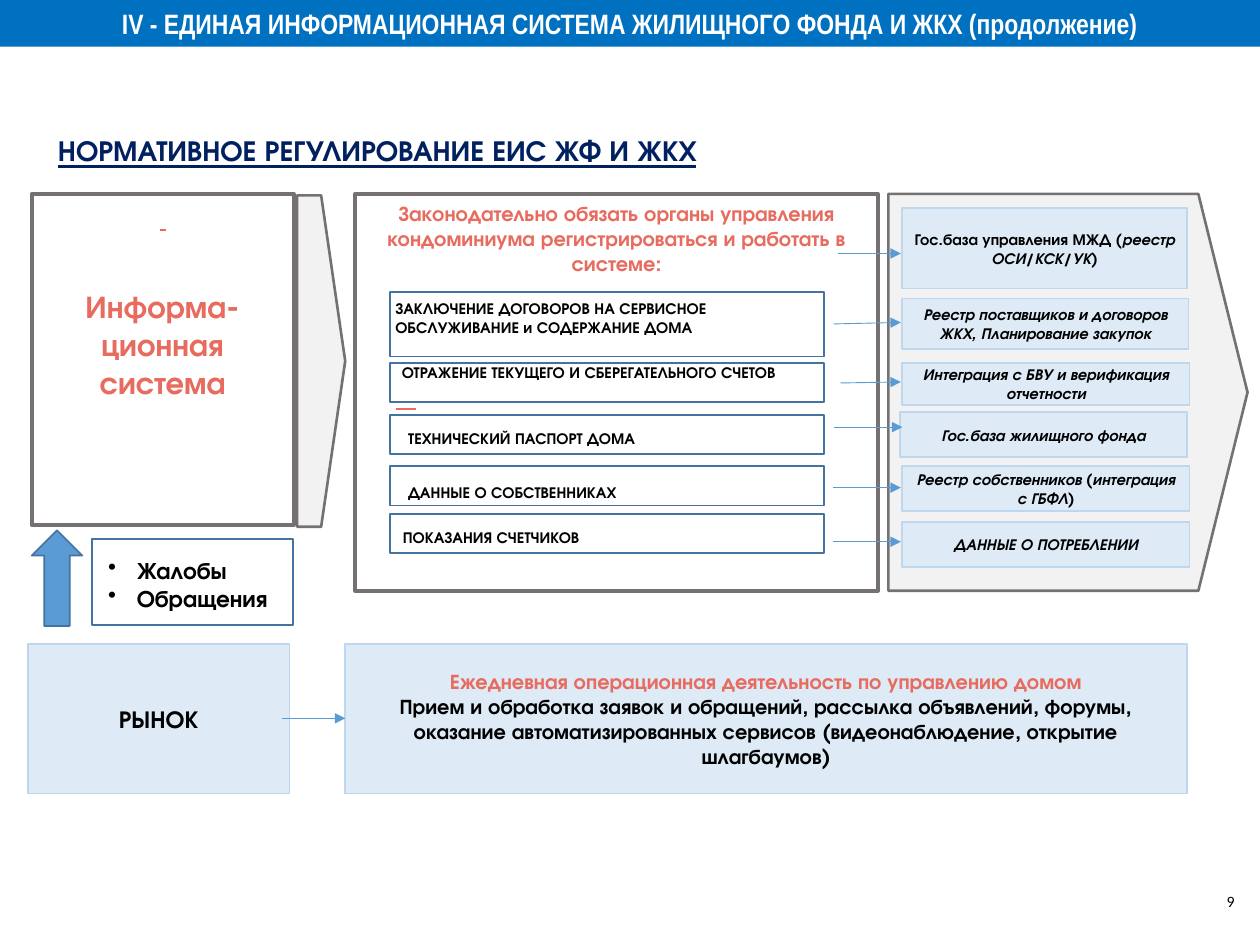
from pptx import Presentation
from pptx.dml.color import RGBColor
from pptx.enum.shapes import MSO_CONNECTOR as Link, MSO_SHAPE as Form
from pptx.enum.text import MSO_ANCHOR as Anchor, PP_ALIGN as Align
from pptx.oxml.ns import qn
from pptx.util import Cm, Pt
from lxml import etree

WHITE = RGBColor(0xFF, 0xFF, 0xFF)
BLACK = RGBColor(0, 0, 0)
NAVY = RGBColor(0x00, 0x20, 0x60)
CORAL = RGBColor(0xE7, 0x6B, 0x5E)
GRAY = RGBColor(0x76, 0x71, 0x71)
PALE = RGBColor(0xF2, 0xF2, 0xF2)
SKY = RGBColor(0xDE, 0xEB, 0xF7)
RIM = RGBColor(0xBD, 0xD7, 0xEE)
BLUE = RGBColor(0x5B, 0x9B, 0xD5)
EDGE = RGBColor(0x43, 0x73, 0x9E)
BAR = RGBColor(0x00, 0x70, 0xC0)
FACE = "TeX Gyre Adventor"

TASKS = [
    (5.89, 1.3, 0.1, 0.14, ["ЗАКЛЮЧЕНИЕ ДОГОВОРОВ НА СЕРВИСНОЕ",
                            "ОБСЛУЖИВАНИЕ и СОДЕРЖАНИЕ ДОМА"]),
    (7.32, 0.79, 0.23, 0, ["ОТРАЖЕНИЕ ТЕКУЩЕГО И СБЕРЕГАТЕЛЬНОГО СЧЕТОВ"]),
    (8.36, 0.79, 0.36, 0.28, ["ТЕХНИЧЕСКИЙ ПАСПОРТ ДОМА"]),
    (9.4, 0.79, 0.36, 0.34, ["ДАННЫЕ О СОБСТВЕННИКАХ"]),
    (10.36, 0.79, 0.25, 0.28, ["ПОКАЗАНИЯ СЧЕТЧИКОВ"]),
]
BASES = [
    (18.19, 4.19, 5.74, 1.63, "Гос.база управления МЖД ", "(реестр ОСИ/КСК/УК)"),
    (18.19, 6.02, 5.77, 1.02, "", "Реестр поставщиков и договоров ЖКХ, Планирование закупок"),
    (18.19, 7.32, 5.79, 0.84, "", "Интеграция с БВУ и верификация отчетности"),
    (18.14, 8.31, 5.79, 0.91, "", "Гос.база жилищного фонда"),
    (18.19, 9.4, 5.79, 0.91, "", "Реестр собственников (интеграция с ГБФЛ)"),
    (18.19, 10.52, 5.79, 0.91, "", "ДАННЫЕ О ПОТРЕБЛЕНИИ"),
]
ARROWS = [
    (16.89, 5.11, 18.16, 5.11), (16.81, 6.53, 18.16, 6.5),
    (16.94, 7.72, 18.16, 7.7), (16.81, 8.61, 18.19, 8.61),
    (16.79, 9.83, 18.16, 9.83), (16.79, 10.92, 18.16, 10.92),
    (5.69, 14.48, 6.96, 14.48),
]


def shape(slide, area, fill=None, line=None, width=1, form=Form.RECTANGLE):
    item = slide.shapes.add_shape(form, *map(Cm, area))
    item.shadow.inherit = False
    if fill is None:
        item.fill.background()
    else:
        item.fill.solid()
        item.fill.fore_color.rgb = fill
    item.line.color.rgb = line
    item.line.width = Pt(width)
    return item


def label(slide, area):
    return slide.shapes.add_textbox(*map(Cm, area))


def write(item, lines, size, color=BLACK, align=Align.CENTER,
          anchor=Anchor.MIDDLE, bold=True, face=FACE, pad=(0.25, 0.13, 0.25, 0.13)):
    frame = item.text_frame
    frame.word_wrap = True
    frame.vertical_anchor = anchor
    (frame.margin_left, frame.margin_top,
     frame.margin_right, frame.margin_bottom) = map(Cm, pad)
    frame.text = "\n".join(lines)
    for para in frame.paragraphs:
        para.alignment = align
        font = para.font
        font.name, font.size, font.bold = face, Pt(size), bold
        font.color.rgb = color
    return frame


def line(slide, ends, color=BLUE, width=0.5, arrow=True):
    link = slide.shapes.add_connector(Link.STRAIGHT, *map(Cm, ends))
    link.line.color.rgb = color
    link.line.width = Pt(width)
    if arrow:
        etree.SubElement(link.line._get_or_add_ln(), qn("a:tailEnd"), type="triangle")
    etree.SubElement(link._element.spPr, qn("a:effectLst"))


def bullet(para):
    props = para._p.get_or_add_pPr()
    props.set("marL", str(Cm(0.58)))
    props.set("indent", str(Cm(-0.58)))
    mark = etree.Element(qn("a:buChar"), char="•")
    props.insert_element_before(mark, "a:tabLst", "a:defRPr", "a:extLst")


def head(slide):
    title = slide.shapes.title
    title.left, title.top, title.width, title.height = map(Cm, (0, 0, 25.4, 0.94))
    title.fill.solid()
    title.fill.fore_color.rgb = BAR
    write(title, ["IV - ЕДИНАЯ ИНФОРМАЦИОННАЯ СИСТЕМА ЖИЛИЩНОГО ФОНДА И ЖКХ (продолжение)"],
          16, WHITE, face="Arial Narrow")
    sub = write(label(slide, (1.04, 2.57, 19.3, 0.89)),
                ["НОРМАТИВНОЕ РЕГУЛИРОВАНИЕ ЕИС ЖФ И ЖКХ"], 16.6, NAVY,
                Align.LEFT, pad=(0.13, 0.08, 0.13, 0.08))
    sub.paragraphs[0].font.underline = True


def source(slide):
    panel = shape(slide, (0.64, 3.91, 5.28, 6.68), WHITE, GRAY, 2.25)
    write(panel, ["Информа-", "ционная", "система"], 18, CORAL,
          anchor=Anchor.TOP, pad=(0.25, 1.88, 0.25, 0.13))
    line(slide, (3.23, 4.64, 3.35, 4.64), CORAL, 1, False)
    shape(slide, (5.99, 3.94, 0.97, 6.68), PALE, GRAY, 1.5, Form.PENTAGON)
    shape(slide, (0.64, 10.69, 1.02, 1.93), BLUE, EDGE, form=Form.UP_ARROW)
    shape(slide, (1.85, 10.87, 4.06, 1.73), line=EDGE)
    claims = write(label(slide, (1.93, 11.07, 4.19, 1.42)), ["Жалобы", "Обращения"],
                   13.5, align=Align.LEFT, anchor=Anchor.TOP)
    for para in claims.paragraphs:
        bullet(para)


def duties(slide):
    panel = shape(slide, (7.16, 3.91, 10.54, 8), WHITE, GRAY, 2.25)
    write(panel, ["Законодательно обязать органы управления кондоминиума "
                  "регистрироваться и работать в системе:"], 12, CORAL, anchor=Anchor.TOP)
    for top, high, left, drop, lines in TASKS:
        box = shape(slide, (7.87, top, 8.74, high), line=EDGE)
        write(box, lines, 9, align=Align.LEFT, anchor=Anchor.TOP, pad=(left, drop, 0, 0))
    line(slide, (7.98, 8.25, 8.38, 8.25), CORAL, 1, False)


def bases(slide):
    back = shape(slide, (17.91, 3.91, 7.24, 8), PALE, GRAY, 1.5, Form.PENTAGON)
    back.adjustments[0] = 0.137
    for left, top, wide, high, plain, slant in BASES:
        box = shape(slide, (left, top, wide, high), SKY, RIM)
        para = write(box, [plain], 9).paragraphs[0]
        run = para.add_run()
        run.text = slant
        run.font.italic = True


def market(slide):
    write(shape(slide, (0.56, 12.98, 5.28, 3.02), SKY, RIM), ["РЫНОК"], 14)
    box = shape(slide, (6.96, 12.98, 16.97, 3.02), SKY, RIM)
    frame = write(box, [
        "Ежедневная операционная деятельность по управлению домом",
        "Прием и обработка заявок и обращений, рассылка объявлений, форумы, оказание "
        "автоматизированных сервисов (видеонаблюдение, открытие шлагбаумов)"], 12)
    frame.paragraphs[0].font.color.rgb = CORAL


def main():
    deck = Presentation()
    deck.slide_width, deck.slide_height = Cm(25.4), Cm(19.05)
    slide = deck.slides.add_slide(deck.slide_layouts[5])
    head(slide)
    source(slide)
    duties(slide)
    bases(slide)
    market(slide)
    for ends in ARROWS:
        line(slide, ends)
    write(label(slide, (24.26, 17.65, 0.81, 1.02)), ["9"], 9, align=Align.RIGHT,
          bold=False, face="Calibri", pad=(0.18, 0.1, 0.18, 0.1))
    deck.save("out.pptx")


if __name__ == "__main__":
    main()
